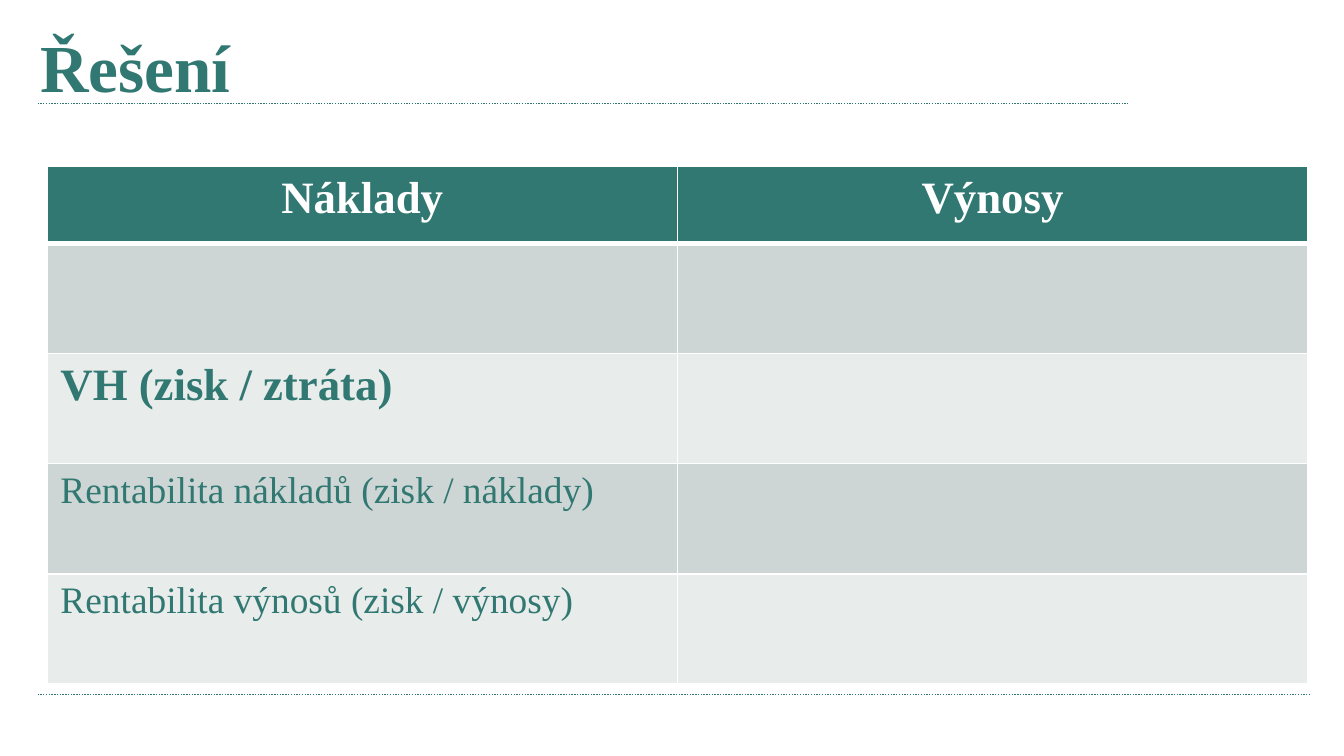
from dataclasses import dataclass

from lxml import etree
from pptx import Presentation
from pptx.dml.color import RGBColor
from pptx.enum import dml, shapes, text
from pptx.oxml.ns import qn
from pptx.util import Inches, Pt

COLORS = {
    "teal": "307871",
    "white": "FFFFFF",
    "dark_band": "CDD6D5",
    "light_band": "E8ECEB",
}
FONT = "Times New Roman"


@dataclass
class Rule:
    y: float
    right: float


@dataclass
class Row:
    labels: tuple[str, str]
    fill: str
    height: float = 0.82
    size: int = 24
    bold: bool = True
    color: str = "teal"
    align: text.PP_ALIGN = text.PP_ALIGN.LEFT


RULES = [Rule(0.77, 8.39), Rule(5.17, 9.75)]
ROWS = [
    Row(("Náklady", "Výnosy"), "teal", height=0.57, color="white",
        align=text.PP_ALIGN.CENTER),
    Row(("", ""), "dark_band"),
    Row(("VH (zisk / ztráta)", ""), "light_band"),
    Row(("Rentabilita nákladů (zisk / náklady)", ""), "dark_band", size=20, bold=False),
    Row(("Rentabilita výnosů (zisk / výnosy)", ""), "light_band", size=20, bold=False),
]


def rgb(name: str) -> RGBColor:
    return RGBColor.from_string(COLORS[name])


def style(paragraph, size: int, bold: bool, color: str) -> None:
    font = paragraph.font
    font.name, font.size, font.bold = FONT, Pt(size), bold
    font.color.rgb = rgb(color)


def draw_rule(slide, rule: Rule) -> None:
    line = slide.shapes.add_connector(
        shapes.MSO_CONNECTOR.STRAIGHT,
        Inches(0.28), Inches(rule.y), Inches(rule.right), Inches(rule.y))
    line.line.color.rgb = rgb("teal")
    line.line.width = Pt(0.75)
    line.line.dash_style = dml.MSO_LINE.ROUND_DOT
    etree.SubElement(line._element.spPr, qn("a:effectLst"))


def draw_title(slide, title: str) -> None:
    box = slide.shapes.add_textbox(Inches(0.2), Inches(0.14), Inches(8.82), Inches(0.79))
    frame = box.text_frame
    frame.word_wrap = True
    frame.vertical_anchor = text.MSO_ANCHOR.TOP
    frame.text = title
    style(frame.paragraphs[0], 36, True, "teal")


def set_borders(cell, top: float, bottom: float) -> None:
    """Draw white borders, one point wide at the sides; call before filling the cell."""
    properties = cell._tc.get_or_add_tcPr()
    for side, width in (("L", 1), ("R", 1), ("T", top), ("B", bottom)):
        border = etree.SubElement(properties, qn(f"a:ln{side}"), w=str(Pt(width)))
        fill = etree.SubElement(border, qn("a:solidFill"))
        etree.SubElement(fill, qn("a:srgbClr"), val=COLORS["white"])


def draw_table(slide, rows: list[Row]) -> None:
    height = sum(row.height for row in rows)
    table = slide.shapes.add_table(
        len(rows), 2, Inches(0.35), Inches(1.24), Inches(9.38), Inches(height)).table
    for r, row in enumerate(rows):
        table.rows[r].height = Inches(row.height)
        for c, label in enumerate(row.labels):
            cell = table.cell(r, c)
            set_borders(cell, top=3 if r == 1 else 1, bottom=3 if r == 0 else 1)
            cell.fill.solid()
            cell.fill.fore_color.rgb = rgb(row.fill)
            cell.text = label
            paragraph = cell.text_frame.paragraphs[0]
            paragraph.alignment = row.align
            style(paragraph, row.size, row.bold, row.color)


def main() -> None:
    deck = Presentation()
    deck.slide_width = Inches(10)
    deck.slide_height = deck.slide_width * 9 // 16
    slide = deck.slides.add_slide(deck.slide_layouts[6])
    for rule in RULES:
        draw_rule(slide, rule)
    draw_title(slide, "Řešení")
    draw_table(slide, ROWS)
    deck.save("out.pptx")


if __name__ == "__main__":
    main()
